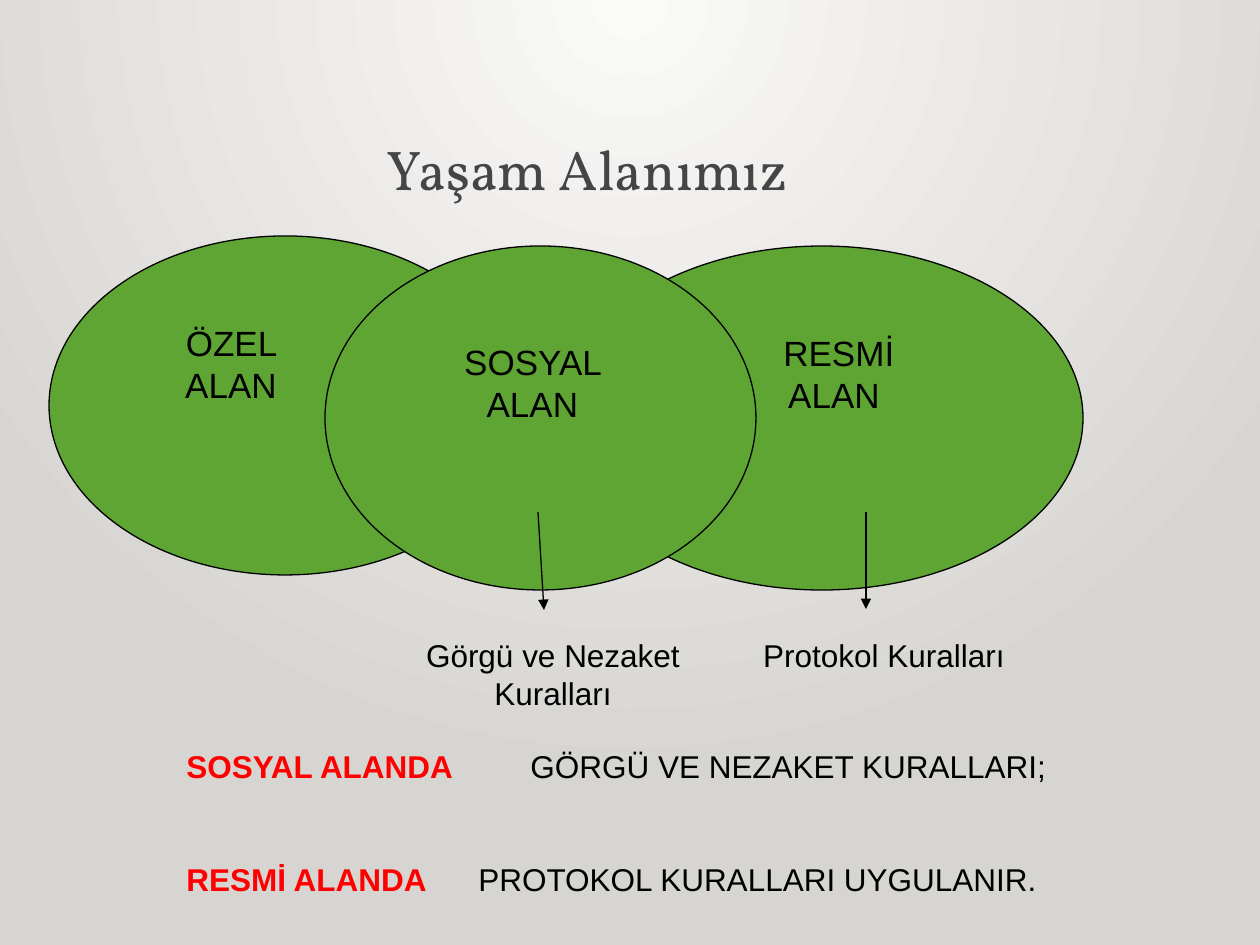
from dataclasses import dataclass

from lxml import etree
from pptx import Presentation
from pptx.dml.color import RGBColor
from pptx.enum.shapes import MSO_CONNECTOR, MSO_SHAPE
from pptx.enum.text import MSO_ANCHOR, PP_ALIGN
from pptx.oxml.ns import qn
from pptx.util import Emu, Pt

OVAL = MSO_SHAPE.OVAL
STRAIGHT = MSO_CONNECTOR.STRAIGHT
LEFT, CENTER = PP_ALIGN.LEFT, PP_ALIGN.CENTER
TOP, MIDDLE = MSO_ANCHOR.TOP, MSO_ANCHOR.MIDDLE
TITLE_ONLY = 5


@dataclass(frozen=True)
class Theme:
    glow: str = "FAFAF9"
    edge: str = "D7D5D2"
    gray: str = "454545"
    black: str = "000000"
    red: str = "FF0000"
    green: str = "5FA534"
    serif: str = "Vollkorn"
    sans: str = "Arial"
    title: int = 32
    area: int = 20
    body: int = 18
    line: float = 0.75
    gap: int = 43


THEME = Theme()


def px(n):
    return Emu(round(n * 914400 / 126))


def rgb(code):
    return RGBColor.from_string(code)


def style(run, size, color, face=THEME.sans, bold=False):
    font = run.font
    font.name, font.size, font.bold = face, Pt(size), bold
    font.color.rgb = rgb(color)


def paint_back(slide):
    """Fill the background with a glow that spreads from the top centre."""
    fill = slide.background.fill
    fill.gradient()
    for stop, color, spot in zip(fill.gradient_stops, (THEME.glow, THEME.edge), (0, 1)):
        stop.color.rgb = rgb(color)
        stop.position = spot
    grad = slide.background._cSld.find(".//" + qn("a:gradFill"))
    lin = grad.find(qn("a:lin"))
    glow = etree.Element(qn("a:path"), {"path": "circle"})
    etree.SubElement(glow, qn("a:fillToRect"),
                     {"l": "43000", "t": "0", "r": "43000", "b": "100000"})
    grad.replace(lin, glow)


def set_title(slide, text, x, y, w, h):
    title = slide.shapes.title
    title.left, title.top, title.width, title.height = map(px, (x, y, w, h))
    frame = title.text_frame
    frame.text = text
    frame.vertical_anchor = MIDDLE
    para = frame.paragraphs[0]
    para.alignment = LEFT
    style(para.runs[0], THEME.title, THEME.gray, THEME.serif)


def add_oval(slide, x, y, w, h):
    oval = slide.shapes.add_shape(OVAL, *map(px, (x, y, w, h)))
    oval.shadow.inherit = False
    oval.fill.solid()
    oval.fill.fore_color.rgb = rgb(THEME.green)
    oval.line.color.rgb = rgb(THEME.black)
    oval.line.width = Pt(THEME.line)


def add_frame(slide, x, y, w, h):
    frame = slide.shapes.add_textbox(*map(px, (x, y, w, h))).text_frame
    frame.word_wrap = True
    frame.vertical_anchor = TOP
    return frame


def add_label(slide, text, box, size):
    frame = add_frame(slide, *box)
    frame.text = text
    para = frame.paragraphs[0]
    para.alignment = CENTER
    style(para.runs[0], size, THEME.black)


def add_arrow(slide, x1, y1, x2, y2):
    arrow = slide.shapes.add_connector(STRAIGHT, *map(px, (x1, y1, x2, y2)))
    arrow.line.color.rgb = rgb(THEME.black)
    arrow.line.width = Pt(THEME.line)
    etree.SubElement(arrow.line._get_or_add_ln(), qn("a:tailEnd"), {"type": "triangle"})
    etree.SubElement(arrow._element.spPr, qn("a:effectLst"))


def add_rules(slide, rows, x, y, w, h):
    """Write each area in red, then its rule at a tab stop."""
    frame = add_frame(slide, x, y, w, h)
    for i, (area, rule, stop) in enumerate(rows):
        para = frame.add_paragraph() if i else frame.paragraphs[0]
        tabs = etree.SubElement(para._p.get_or_add_pPr(), qn("a:tabLst"))
        etree.SubElement(tabs, qn("a:tab"), {"pos": str(px(stop)), "algn": "l"})
        if i:
            para.space_before = Pt(THEME.gap)
        for text, color, bold in ((area + "\t", THEME.red, True),
                                  (rule, THEME.black, False)):
            run = para.add_run()
            run.text = text
            style(run, THEME.body, color, bold=bold)


def main():
    deck = Presentation()
    deck.slide_width, deck.slide_height = px(1260), px(945)
    slide = deck.slides.add_slide(deck.slide_layouts[TITLE_ONLY])
    paint_back(slide)
    set_title(slide, "Yaşam Alanımız", 374, 100, 532, 136)

    # Overlapping areas of life, the social one in front
    for box in ((561, 246, 522, 344), (49, 236, 472, 339), (325, 246, 431, 344)):
        add_oval(slide, *box)
    for text, box in ((" RESMİ ALAN", (728, 325, 212, 97)),
                      ("SOSYAL ALAN", (443, 334, 179, 97)),
                      ("ÖZEL ALAN", (157, 315, 148, 97))):
        add_label(slide, text, box, THEME.area)

    # Arrows to the rules of each area
    add_arrow(slide, 538, 512, 544, 610)
    add_arrow(slide, 866, 512, 866, 609)
    for text, box in (("Görgü ve Nezaket Kuralları", (394, 630, 318, 89)),
                      ("Protokol Kuralları", (719, 630, 330, 50))):
        add_label(slide, text, box, THEME.body)

    # Summary
    add_rules(slide, (("SOSYAL ALANDA", "GÖRGÜ VE NEZAKET KURALLARI;", 344),
                      ("RESMİ ALANDA", "PROTOKOL KURALLARI UYGULANIR.", 292)),
              174, 741, 978, 165)
    deck.save("out.pptx")


if __name__ == "__main__":
    main()
